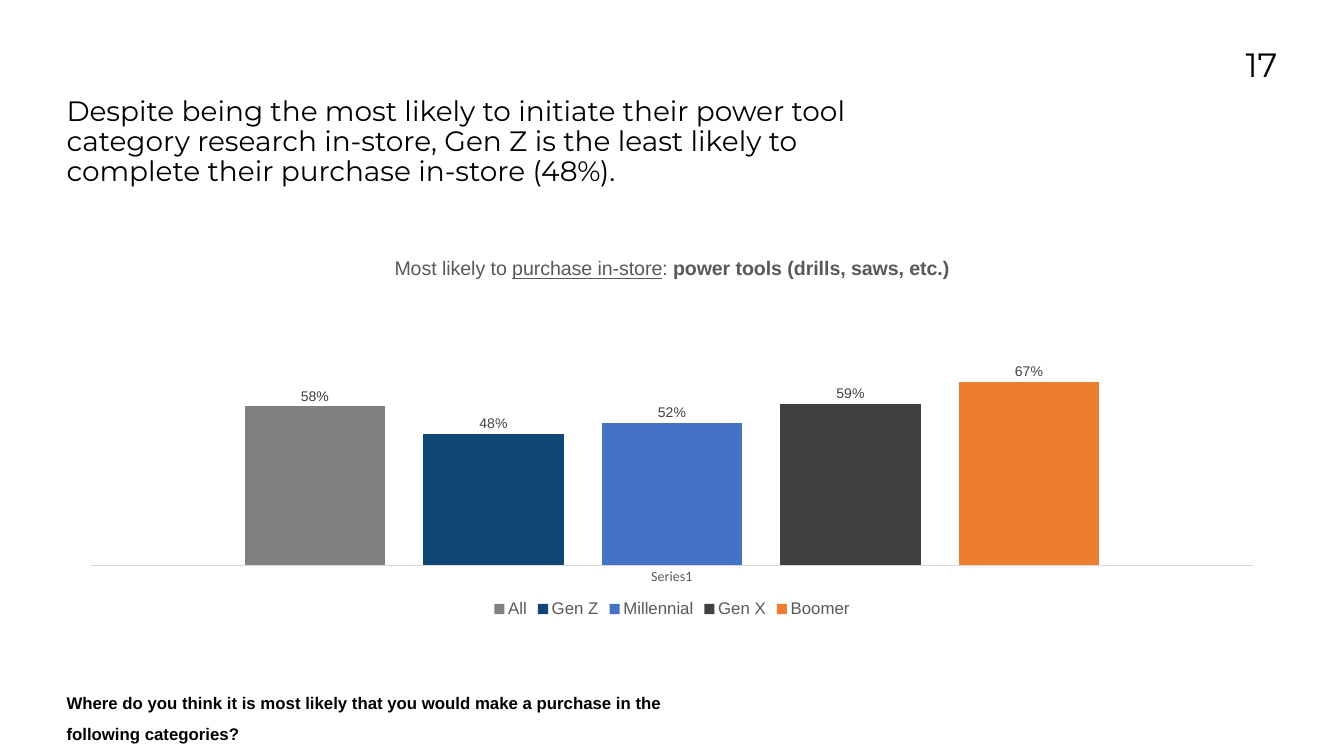
from dataclasses import dataclass

from lxml.etree import SubElement
from pptx import Presentation
from pptx.chart.data import CategoryChartData
from pptx.dml.color import RGBColor
from pptx.enum.chart import (XL_CHART_TYPE, XL_LABEL_POSITION,
                             XL_LEGEND_POSITION, XL_TICK_MARK)
from pptx.enum.text import MSO_ANCHOR, MSO_AUTO_SIZE, PP_ALIGN
from pptx.oxml.ns import qn
from pptx.util import Inches, Pt


@dataclass(frozen=True)
class Theme:
    head: str = "Montserrat"
    body: str = "Arial"
    axis: str = "Calibri"
    ink: str = "000000"
    grey: str = "595959"
    dark: str = "404040"
    rule: str = "D9D9D9"
    number: int = 48
    title: int = 40
    chart: int = 28
    small: int = 24
    label: int = 20


# Shares of the slide's size, in percent
EDGE = 4.95
FULL = 100 - 2 * EDGE

BARS = [
    ("All", 0.58, "808080"),
    ("Gen Z", 0.48, "104674"),
    ("Millennial", 0.52, "4472C4"),
    ("Gen X", 0.59, "404040"),
    ("Boomer", 0.67, "ED7D31"),
]


class Page:
    def __init__(self, theme):
        self.theme = theme
        self.deck = Presentation()
        self.deck.slide_width = Inches(26.67)
        self.deck.slide_height = Inches(15)
        self.slide = self.deck.slides.add_slide(self.deck.slide_layouts[5])

    def place(self, left, top, width, height):
        wide, high = self.deck.slide_width, self.deck.slide_height
        return [int(share * size / 100) for share, size in
                zip((left, top, width, height), (wide, high, wide, high))]

    def style(self, font, face, size, color, bold=False, under=False):
        font.name, font.size = face, Pt(size)
        font.bold, font.underline = bold, under
        font.color.rgb = RGBColor.from_string(color)

    def fill(self, shape, text, face, size, bold=False, space=1.0,
             align=PP_ALIGN.LEFT):
        frame = shape.text_frame
        frame.word_wrap = True
        frame.auto_size = MSO_AUTO_SIZE.NONE
        frame.vertical_anchor = MSO_ANCHOR.TOP
        frame.margin_left = frame.margin_right = 0
        frame.margin_top = frame.margin_bottom = 0
        para = frame.paragraphs[0]
        para.alignment, para.line_spacing = align, space
        run = para.add_run()
        run.text = text
        self.style(run.font, face, size, self.theme.ink, bold)

    def title(self, spot, text):
        shape = self.slide.shapes.title
        shape.left, shape.top, shape.width, shape.height = self.place(*spot)
        self.fill(shape, text, self.theme.head, self.theme.title, space=0.9)

    def text(self, spot, text, face, size, **look):
        shape = self.slide.shapes.add_textbox(*self.place(*spot))
        self.fill(shape, text, face, size, **look)

    def chart(self, spot, group, bars, parts, inner):
        look = self.theme
        data = CategoryChartData(number_format="0%")
        data.categories = [group]
        for name, value, _ in bars:
            data.add_series(name, [value])
        chart = self.slide.shapes.add_chart(
            XL_CHART_TYPE.COLUMN_CLUSTERED, *self.place(*spot), data).chart
        self.style(chart.font, look.axis, 10, look.ink)

        # Heading, run by run
        para = chart.chart_title.text_frame.paragraphs[0]
        for words, bold, under in parts:
            run = para.add_run()
            run.text = words
            self.style(run.font, look.body, look.chart, look.grey, bold, under)

        # Legend
        chart.has_legend = True
        chart.legend.position = XL_LEGEND_POSITION.BOTTOM
        chart.legend.include_in_layout = False
        self.style(chart.legend.font, look.body, look.small, look.grey)

        # Axes
        base, scale = chart.category_axis, chart.value_axis
        base.major_tick_mark = base.minor_tick_mark = XL_TICK_MARK.NONE
        self.style(base.tick_labels.font, look.axis, look.label, look.grey)
        base.format.line.color.rgb = RGBColor.from_string(look.rule)
        base.format.line.width = Pt(0.75)
        scale.minimum_scale, scale.maximum_scale = 0, 1
        scale.has_major_gridlines = False
        scale.visible = False

        # Columns and their labels
        plot = chart.plots[0]
        plot.gap_width, plot.overlap = 219, -27
        plot.vary_by_categories = False
        for series, (_, _, color) in zip(plot.series, bars):
            series.format.fill.solid()
            series.format.fill.fore_color.rgb = RGBColor.from_string(color)
            series.invert_if_negative = False
            labels = series.data_labels
            labels.show_value = True
            labels.number_format = "0%"
            labels.number_format_is_linked = False
            labels.position = XL_LABEL_POSITION.OUTSIDE_END
            self.style(labels.font, look.body, look.label, look.dark)

        # Fixed plot area, as shares of the chart
        area = chart.element.find(".//" + qn("c:plotArea"))
        for old in area.findall(qn("c:layout")):
            area.remove(old)
        layout = SubElement(area, qn("c:layout"))
        area.insert(0, layout)
        manual = SubElement(layout, qn("c:manualLayout"))
        marks = {"layoutTarget": "inner", "xMode": "edge", "yMode": "edge",
                 **dict(zip("xywh", inner))}
        for key, value in marks.items():
            SubElement(manual, qn("c:" + key)).set("val", str(value))


def main():
    theme = Theme()
    page = Page(theme)

    # Page number and title
    page.text((EDGE + FULL - 8.44, 5.87, 8.44, 10.93), "17",
              theme.head, theme.number, align=PP_ALIGN.RIGHT)
    page.title((EDGE, 12.87, 60, 13.87),
               "Despite being the most likely to initiate their power tool "
               "category research in-store, Gen Z is the least likely to "
               "complete their purchase in-store (48%).")

    # Purchase chart
    page.chart((EDGE, 32.53, FULL, 49.73), "Series1", BARS,
               [("Most likely to ", False, False),
                ("purchase in-store", False, True),
                (": ", False, False),
                ("power tools (drills, saws, etc.)", True, False)],
               inner=(0.02, 0.12, 0.96, 0.73))

    # Survey question
    page.text((EDGE, 90.33, 45, 4.33),
              "Where do you think it is most likely that you would make a "
              "purchase in the following categories?",
              theme.body, theme.small, bold=True, space=1.5)

    page.deck.save("out.pptx")


if __name__ == "__main__":
    main()
